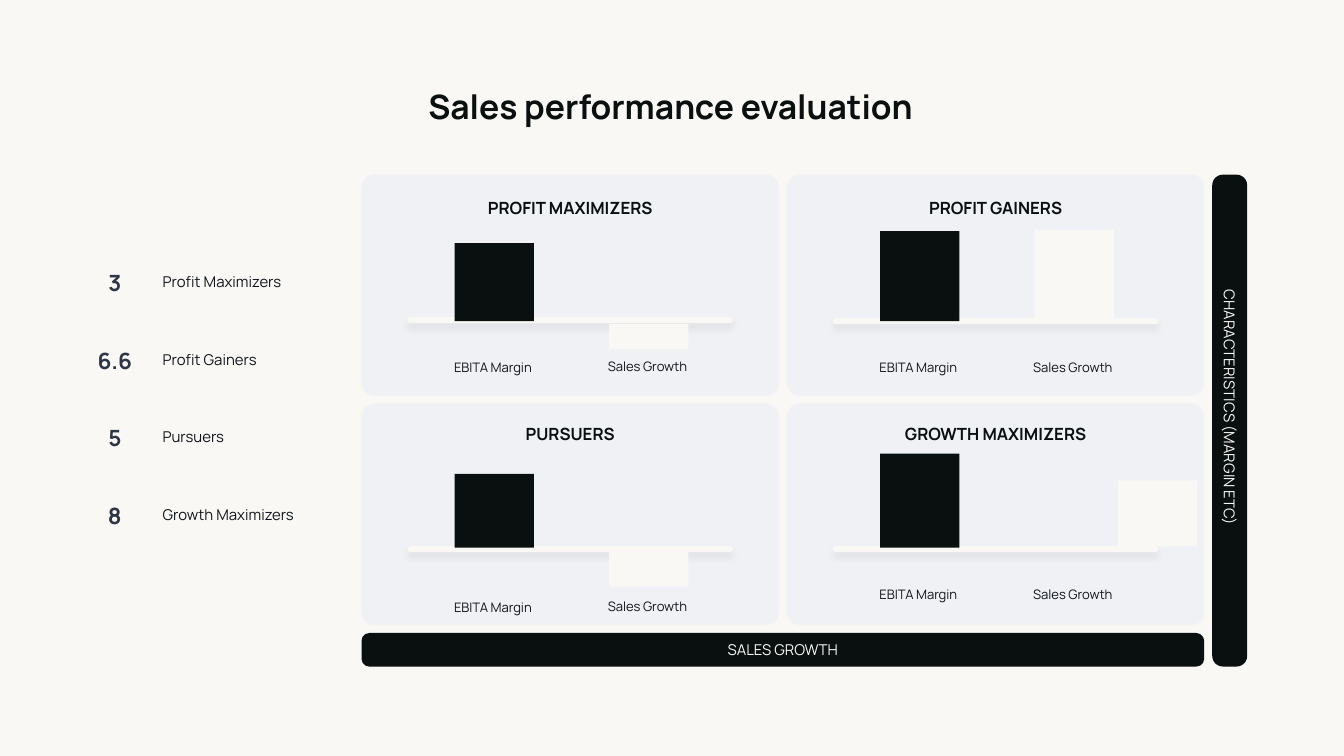
from dataclasses import dataclass

from lxml import etree
from pptx import Presentation
from pptx.dml.color import RGBColor
from pptx.enum.shapes import MSO_CONNECTOR, MSO_SHAPE
from pptx.enum.text import MSO_ANCHOR, MSO_AUTO_SIZE, PP_ALIGN
from pptx.oxml import parse_xml
from pptx.oxml.ns import nsdecls, qn
from pptx.util import Inches, Pt

RECT, ROUND, OVAL = MSO_SHAPE.RECTANGLE, MSO_SHAPE.ROUNDED_RECTANGLE, MSO_SHAPE.OVAL
LINE = MSO_CONNECTOR.STRAIGHT
TOP, MIDDLE = MSO_ANCHOR.TOP, MSO_ANCHOR.MIDDLE
LEFT, CENTER = PP_ALIGN.LEFT, PP_ALIGN.CENTER
GROW = MSO_AUTO_SIZE.SHAPE_TO_FIT_TEXT


@dataclass(frozen=True)
class Theme:
    font: str = "Manrope"
    paper: str = "F9F8F5"
    card: str = "EFF1F5"
    edge: str = "F4F4F4"
    dark: str = "09100F"
    body: str = "11151B"
    slate: str = "2C3645"
    title: int = 18
    number: int = 12
    head: int = 9
    text: int = 8
    label: int = 7


@dataclass(frozen=True)
class Quad:
    name: str
    head: float
    base: float
    margin: tuple
    growth: tuple
    labels: tuple
    shift: float = 1.48


THEME = Theme()
PAD = (0.07, 0.04)
BAR = 0.59
AXIS = 2.38

KEYS = [
    ("3", "Profit Maximizers"),
    ("6.6", "Profit Gainers"),
    ("5", "Pursuers"),
    ("8", "Growth Maximizers"),
]
QUADS = [
    [
        Quad("PROFIT MAXIMIZERS", 0.13, 1.08, (0.51, 0.58), (1.11, 0.19), (1.34, 1.33)),
        Quad("PROFIT GAINERS", 0.13, 1.09, (0.42, 0.67), (0.41, 0.67), (1.34, 1.34)),
    ],
    [
        Quad("PURSUERS", 0.11, 1.08, (0.52, 0.55), (1.1, 0.26), (1.42, 1.41)),
        Quad("GROWTH MAXIMIZERS", 0.11, 1.08, (0.37, 0.7), (0.57, 0.49), (1.32, 1.32), 2.1),
    ],
]


def color(code):
    return RGBColor.from_string(code)


def write(frame, text, size, tint, bold=False, align=CENTER, space=None):
    para = frame.paragraphs[0]
    para.alignment = align
    if space:
        para.line_spacing = space
    run = para.add_run()
    run.text = text
    font = run.font
    font.name, font.size, font.bold = THEME.font, Pt(size), bold
    font.color.rgb = color(tint)


def inset(frame, pad, anchor):
    frame.margin_left = frame.margin_right = Inches(pad[0])
    frame.margin_top = frame.margin_bottom = Inches(pad[1])
    frame.vertical_anchor = anchor
    frame.word_wrap = True


def add_text(slide, box, text, size, tint, pad=PAD, anchor=MIDDLE, **style):
    shape = slide.shapes.add_textbox(*map(Inches, box))
    inset(shape.text_frame, pad, anchor)
    shape.text_frame.auto_size = GROW
    write(shape.text_frame, text, size, tint, **style)
    return shape


def add_block(slide, kind, box, fill, edge=None, curve=None):
    shape = slide.shapes.add_shape(kind, *map(Inches, box))
    shape.shadow.inherit = False
    shape.fill.solid()
    shape.fill.fore_color.rgb = color(fill)
    if edge:
        shape.line.color.rgb = color(edge)
        shape.line.width = Pt(0.75)
    else:
        shape.line.fill.background()
    if curve:
        shape.adjustments[0] = curve
    return shape


def add_axis(slide, x, y):
    line = slide.shapes.add_connector(
        LINE, Inches(x), Inches(y), Inches(x + AXIS), Inches(y)
    )
    line.line.color.rgb = color(THEME.paper)
    line.line.width = Pt(3)
    glow = parse_xml(f"<a:effectLst {nsdecls('a')}/>")
    cast = etree.SubElement(
        glow, qn("a:outerShdw"), blurRad=str(Pt(4)), dist=str(Pt(3)),
        dir="5400000", algn="t", rotWithShape="0",
    )
    tint = etree.SubElement(cast, qn("a:srgbClr"), val="000000")
    etree.SubElement(tint, qn("a:alpha"), val="7000")
    stroke = line.line._get_or_add_ln()
    stroke.set("cap", "rnd")
    stroke.addnext(glow)


def add_keys(slide, box):
    left, top, width, height = box
    size = 0.47
    step = (height - size) / (len(KEYS) - 1)
    for row, (count, name) in enumerate(KEYS):
        y = top + row * step
        add_text(slide, (left + 0.59, y + 0.12, width - 0.59, 0.13), name,
                 THEME.text, THEME.body, pad=(0, 0), align=LEFT, space=1.65)
        dot = add_block(slide, OVAL, (left, y, size, size), THEME.paper)
        inset(dot.text_frame, (0, 0), MIDDLE)
        write(dot.text_frame, count, THEME.number, THEME.slate, bold=True)


def add_quad(slide, box, quad):
    left, top, width, _ = box
    add_block(slide, ROUND, box, THEME.card, THEME.edge, 0.057)
    x = left + (width - AXIS) / 2
    add_axis(slide, x, top + quad.base)
    add_text(slide, (x + 0.04, top + quad.head, 2.3, 0.23), quad.name,
             THEME.head, THEME.dark, bold=True)
    names = ("EBITA Margin", "Sales Growth")
    for name, shift, drop in zip(names, (0.12, 1.27), quad.labels):
        add_text(slide, (x + shift, top + drop, 0.99, 0.19), name,
                 THEME.label, THEME.body)
    bars = (
        (0.33, quad.margin, THEME.dark),
        (quad.shift, quad.growth, THEME.paper),
    )
    for shift, (drop, tall), fill in bars:
        add_block(slide, RECT, (x + shift, top + drop, BAR, tall), fill)


def add_grid(slide, box):
    left, top, width, height = box
    gap = 0.06
    wide, tall = (width - gap) / 2, (height - gap) / 2
    for row, line in enumerate(QUADS):
        for col, quad in enumerate(line):
            x, y = left + col * (wide + gap), top + row * (tall + gap)
            add_quad(slide, (x, y, wide, tall), quad)


def add_band(slide, box, text, span, curve, turn=0, lift=0):
    left, top, width, height = box
    add_block(slide, ROUND, box, THEME.dark, curve=curve)
    tall = 0.21
    place = (left + (width - span) / 2, top + (height - tall) / 2 - lift, span, tall)
    label = add_text(slide, place, text, THEME.text, THEME.paper)
    label.rotation = turn


def main():
    deck = Presentation()
    deck.slide_width = Inches(10)
    deck.slide_height = deck.slide_width * 9 // 16
    slide = deck.slides.add_slide(deck.slide_layouts[6])
    slide.background.fill.solid()
    slide.background.fill.fore_color.rgb = color(THEME.paper)
    add_text(slide, (1.66, 0.48, 6.66, 0.3), "Sales performance evaluation",
             THEME.title, THEME.dark, pad=(0, 0), anchor=TOP, bold=True, space=1.54)
    add_keys(slide, (0.62, 1.87, 2.22, 2.2))
    add_grid(slide, (2.69, 1.3, 6.27, 3.35))
    add_band(slide, (2.69, 4.71, 6.27, 0.25), "SALES GROWTH", 2.39, 0.23)
    add_band(slide, (9.02, 1.3, 0.26, 3.66), "CHARACTERISTICS (MARGIN ETC)",
             2.25, 0.3, turn=90, lift=0.1)
    deck.save("out.pptx")


if __name__ == "__main__":
    main()
